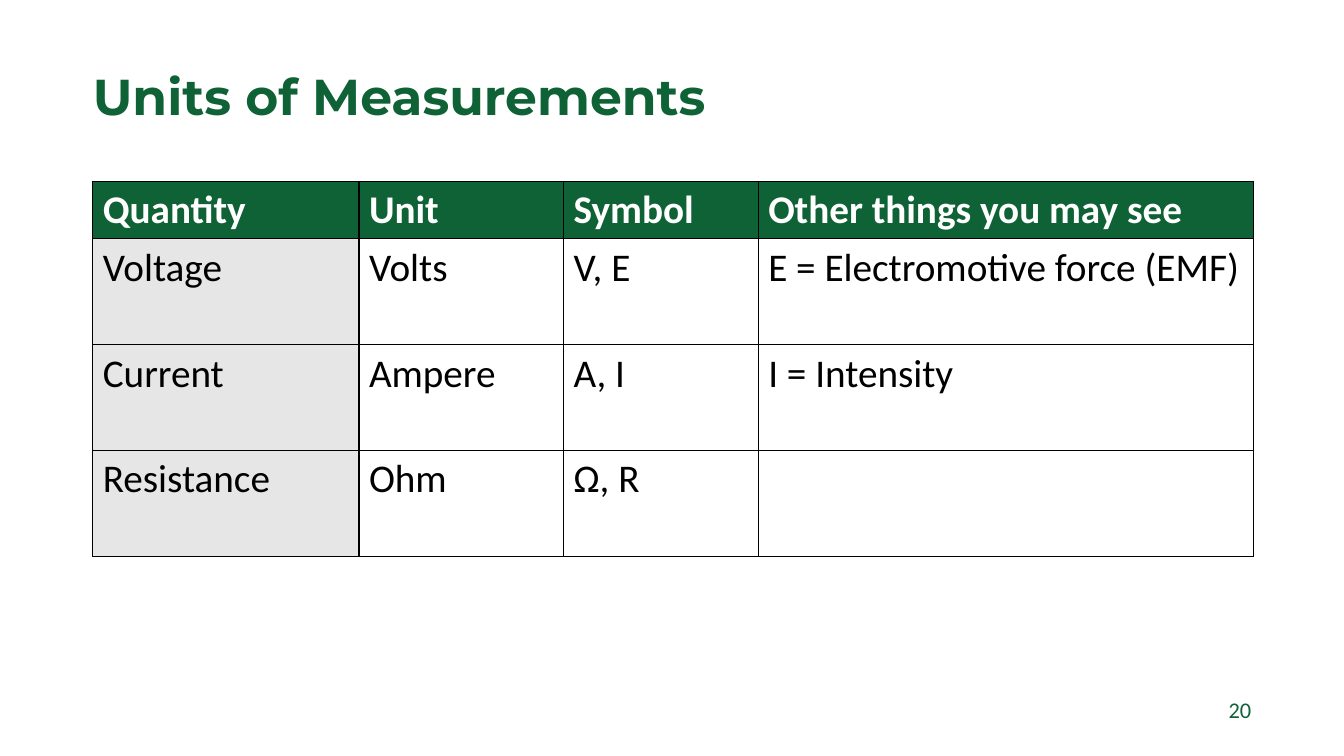
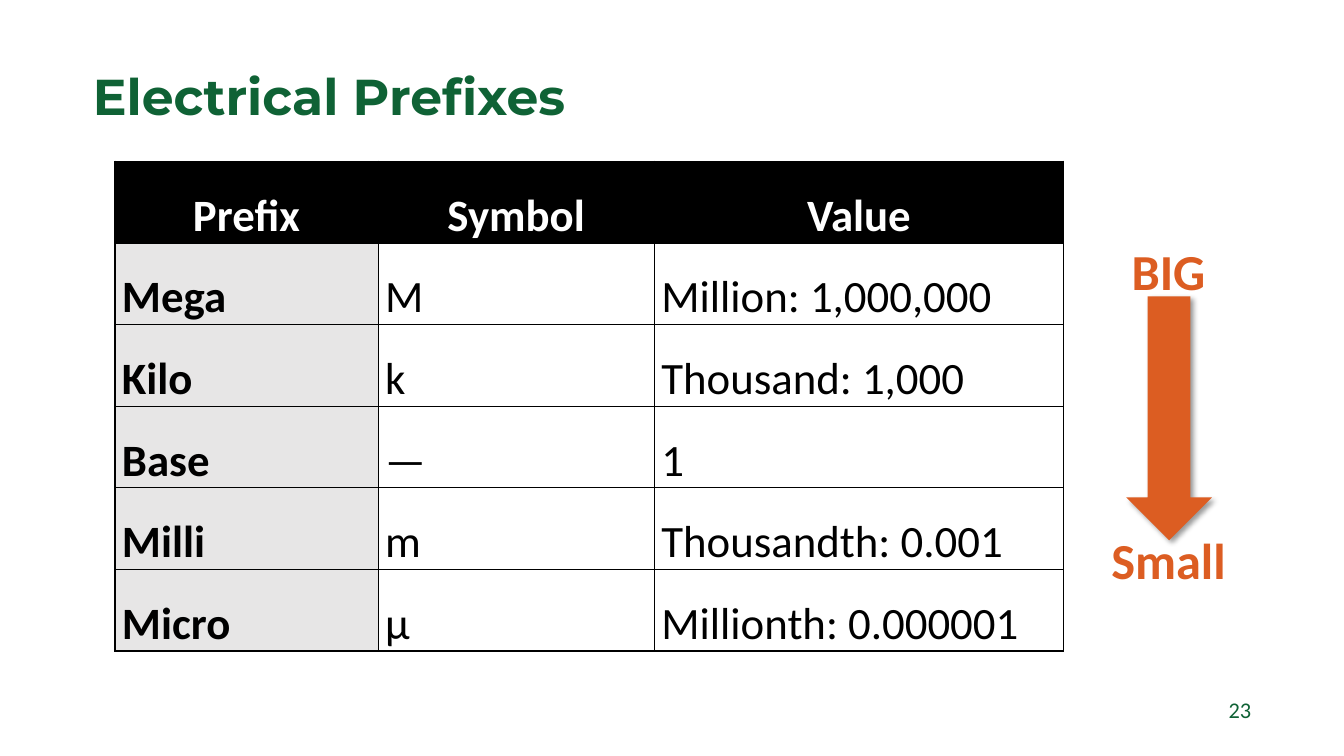
from lxml import etree
from pptx import Presentation
from pptx.dml.color import RGBColor
from pptx.enum.shapes import MSO_SHAPE
from pptx.enum.text import MSO_ANCHOR, PP_ALIGN
from pptx.oxml import parse_xml
from pptx.oxml.ns import nsdecls, qn
from pptx.util import Inches, Pt

LEFT, CENTER, RIGHT = PP_ALIGN.LEFT, PP_ALIGN.CENTER, PP_ALIGN.RIGHT
TOP, MIDDLE = MSO_ANCHOR.TOP, MSO_ANCHOR.MIDDLE
RECT, DOWN_ARROW = MSO_SHAPE.RECTANGLE, MSO_SHAPE.DOWN_ARROW

COLORS = {"green": "0F6235", "orange": "DC5D22", "gray": "E7E6E6",
          "black": "000000", "white": "FFFFFF"}
BODY, HEADING = "Calibri", "Montserrat"
WIDTH, HEIGHT = 13.33, 7.5
MARGIN = 0.92
CONTENT = WIDTH - 2 * MARGIN

SLIDES = [
    {
        "title": "Units of Measurements",
        "number": "20",
        "table": {
            "at": (MARGIN, 1.8),
            "cols": (2.64, 2.03, 1.93, 4.91),
            "rows": (0.57, 1.05),
            "size": 28, "header": "green", "header_align": LEFT,
            "bold_labels": False, "spacing": 1.0, "after": 0,
            "margins": (0.1, 0.05),
            "cells": [
                ("Quantity", "Unit", "Symbol", "Other things you may see"),
                ("Voltage", "Volts", "V, E", "E = Electromotive force (EMF)"),
                ("Current", "Ampere", "A, I", "I = Intensity"),
                ("Resistance", "Ohm", "Ω, R", ""),
            ],
        },
    },
    {
        "title": "Electrical Prefixes",
        "number": "23",
        "table": {
            "at": (1.14, 1.6),
            "cols": (2.61, 2.74, 4.06),
            "rows": (0.81, 0.81),
            "size": 32, "header": "black", "header_align": CENTER,
            "bold_labels": True, "spacing": 1.5, "after": 8,
            "margins": (0.07, 0),
            "cells": [
                ("Prefix", "Symbol", "Value"),
                ("Mega", "M", "Million: 1,000,000"),
                ("Kilo", "k", "Thousand: 1,000"),
                ("Base", "—", "1"),
                ("Milli", "m", "Thousandth: 0.001"),
                ("Micro", "µ", "Millionth: 0.000001"),
            ],
        },
        "scale": {
            "labels": [("BIG", 2.32), ("Small", 5.18)],
            "label_box": (10.76, 1.66, 0.73),
            "arrow": (11.17, 2.94, 0.85, 2.42),
        },
    },
]


def rgb(name):
    return RGBColor.from_string(COLORS[name])


def write(tf, text, size, color, bold=False, font=BODY, **paragraph_format):
    p = tf.paragraphs[0]
    for name, value in paragraph_format.items():
        setattr(p, name, value)
    r = p.add_run()
    r.text = text
    r.font.color.rgb = rgb(color)
    for name, value in {"size": Pt(size), "bold": bold, "name": font}.items():
        setattr(r.font, name, value)


def add_text(s, box, text, size, **style):
    tf = s.shapes.add_textbox(*map(Inches, box)).text_frame
    tf.word_wrap = True
    tf.vertical_anchor = TOP
    for side in ("left", "top", "right", "bottom"):
        setattr(tf, f"margin_{side}", 0)
    write(tf, text, size, "green", **style)


def add_shape(s, kind, box, fill):
    sp = s.shapes.add_shape(kind, *map(Inches, box))
    sp.shadow.inherit = False
    sp.fill.solid()
    sp.fill.fore_color.rgb = rgb(fill)
    sp.line.fill.background()
    return sp


def add_borders(cell):
    tc_pr = cell._tc.get_or_add_tcPr()
    for side in "LRTB":
        line = etree.SubElement(tc_pr, qn(f"a:ln{side}"), w=str(Pt(1)))
        fill = etree.SubElement(line, qn("a:solidFill"))
        etree.SubElement(fill, qn("a:srgbClr"), val=COLORS["black"])


def add_table(s, spec):
    cells, cols = spec["cells"], spec["cols"]
    header_height, row_height = spec["rows"]
    heights = [header_height] + [row_height] * (len(cells) - 1)
    box = (*spec["at"], sum(cols), sum(heights))
    table = s.shapes.add_table(len(cells), len(cols), *map(Inches, box)).table
    for column, width in zip(table.columns, cols):
        column.width = Inches(width)
    for row, height in zip(table.rows, heights):
        row.height = Inches(height)
    side, edge = map(Inches, spec["margins"])
    for i, texts in enumerate(cells):
        for j, text in enumerate(texts):
            cell = table.cell(i, j)
            cell.margin_left = cell.margin_right = side
            cell.margin_top = cell.margin_bottom = edge
            add_borders(cell)
            fill = spec["header"] if i == 0 else "gray" if j == 0 else None
            if fill:
                cell.fill.solid()
                cell.fill.fore_color.rgb = rgb(fill)
            else:
                cell.fill.background()
            write(cell.text_frame, text, spec["size"],
                  "black" if i else "white",
                  bold=i == 0 or (j == 0 and spec["bold_labels"]),
                  alignment=LEFT if i else spec["header_align"],
                  line_spacing=spec["spacing"], space_after=Pt(spec["after"]))


def add_shadow(sp):
    effects = sp._element.spPr.find(qn("a:effectLst"))
    effects.append(parse_xml(
        f'<a:outerShdw {nsdecls("a")} blurRad="{Pt(4)}" dist="{Pt(3)}" '
        f'dir="{45 * 60000}" algn="tl" rotWithShape="0">'
        f'<a:srgbClr val="{COLORS["black"]}"><a:alpha val="40000"/></a:srgbClr>'
        '</a:outerShdw>'))


def add_scale(s, scale):
    left, width, height = scale["label_box"]
    for text, top in scale["labels"]:
        sp = add_shape(s, RECT, (left, top, width, height), "white")
        sp.text_frame.word_wrap = True
        sp.text_frame.vertical_anchor = MIDDLE
        write(sp.text_frame, text, 36, "orange", bold=True, alignment=CENTER)
    add_shadow(add_shape(s, DOWN_ARROW, scale["arrow"], "orange"))


def main():
    prs = Presentation()
    prs.slide_width, prs.slide_height = Inches(WIDTH), Inches(HEIGHT)
    for content in SLIDES:
        s = prs.slides.add_slide(prs.slide_layouts[6])
        add_text(s, (MARGIN, 6.91, CONTENT, 0.4), content["number"], 16,
                 alignment=RIGHT)
        add_text(s, (MARGIN, 0.71, CONTENT, 0.73), content["title"], 36,
                 bold=True, font=HEADING, line_spacing=0.9)
        add_table(s, content["table"])
        if "scale" in content:
            add_scale(s, content["scale"])
    prs.save("out.pptx")


if __name__ == "__main__":
    main()
